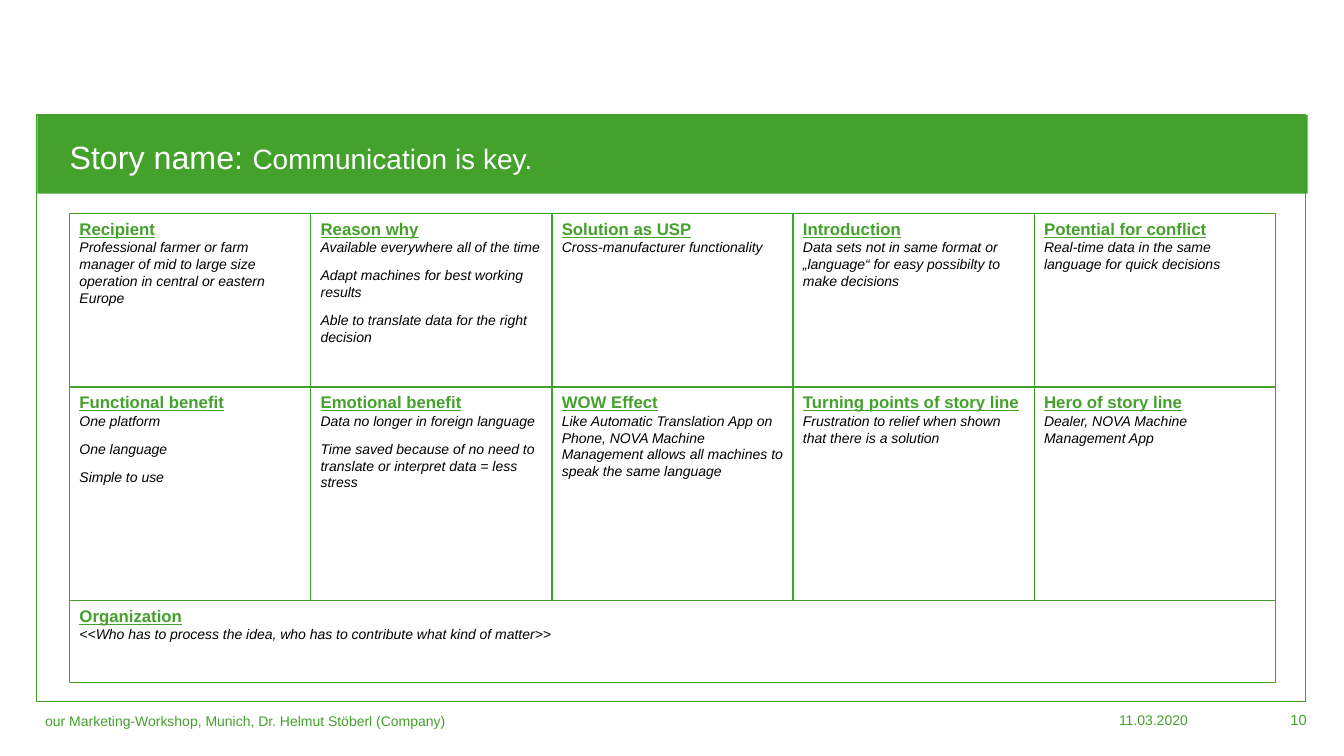
import pptx
import pptx.util
import pptx.dml.color
import pptx.enum.shapes
import pptx.enum.text

Pt, Inch = pptx.util.Pt, pptx.util.Inches
Align = pptx.enum.text.PP_ALIGN
Anchor = pptx.enum.text.MSO_ANCHOR
GREEN, WHITE, BLACK = "44A12C", "FFFFFF", "000000"

# Text formats
HEAD = dict(size=Pt(12), bold=True, underline=True, color=GREEN)
BODY = dict(size=Pt(10), italic=True, color=BLACK)
FOOT = dict(size=Pt(10), color=GREEN)
PAGE = dict(size=Pt(10.5), color=GREEN)
NAME = dict(size=Pt(23), color=WHITE)
CLAIM = dict(size=Pt(20), color=WHITE)

# Story grid: column widths are equal, rows run between these heights
LEFT, WIDE, COLS = 0.69, 11.96, 5
ROWS = [2.12, 3.84, 5.96, 6.77]

# Column, row, columns spanned, rows spanned, heading, lines
CELLS = [
    (0, 0, 1, 2, "Recipient", [
        "Professional farmer or farm manager of mid to large size "
        "operation in central or eastern Europe"]),
    (1, 0, 1, 2, "Reason why", [
        "Available everywhere all of the time",
        "Adapt machines for best working results",
        "Able to translate data for the right decision"]),
    (2, 0, 1, 1, "Solution as USP", ["Cross-manufacturer functionality"]),
    (3, 0, 1, 1, "Introduction", [
        "Data sets not in same format or „language“ for easy "
        "possibilty to make decisions"]),
    (4, 0, 1, 1, "Potential for conflict", [
        "Real-time data in the same language for quick decisions"]),
    (0, 1, 1, 1, "Functional benefit", [
        "One platform", "One language", "Simple to use"]),
    (1, 1, 1, 1, "Emotional benefit", [
        "Data no longer in foreign language",
        "Time saved because of no need to translate or interpret "
        "data = less stress"]),
    (2, 1, 1, 1, "WOW Effect", [
        "Like Automatic Translation App on Phone, NOVA Machine "
        "Management allows all machines to speak the same language"]),
    (3, 1, 1, 1, "Turning points of story line", [
        "Frustration to relief when shown that there is a solution"]),
    (4, 1, 1, 1, "Hero of story line", [
        "Dealer, NOVA Machine Management App"]),
    (0, 2, 5, 1, "Organization", [
        "<<Who has to process the idea, who has to contribute what "
        "kind of matter>>"]),
]


def rgb(code):
    return pptx.dml.color.RGBColor.from_string(code)


def write(para, text, style):
    run = para.add_run()
    run.text = text
    run.font.name = "Arial"
    for key, value in style.items():
        if key == "color":
            run.font.color.rgb = rgb(value)
        else:
            setattr(run.font, key, value)


def pad(frame, side, top):
    for edge, gap in dict(left=side, right=side, top=top, bottom=top).items():
        setattr(frame, "margin_" + edge, Inch(gap))


def rect(slide, box, fill=None, line=None):
    kind = pptx.enum.shapes.MSO_SHAPE.RECTANGLE
    shape = slide.shapes.add_shape(kind, *map(Inch, box))
    shape.shadow.inherit = False
    if fill:
        shape.fill.solid()
        shape.fill.fore_color.rgb = rgb(fill)
    else:
        shape.fill.background()
    if line:
        shape.line.color.rgb = rgb(line)
        shape.line.width = Pt(1)
    else:
        shape.line.fill.background()
    return shape


def label(slide, box, text, style, align, anchor, side=0, top=0):
    frame = slide.shapes.add_textbox(*map(Inch, box)).text_frame
    frame.word_wrap = True
    frame.vertical_anchor = anchor
    pad(frame, side, top)
    para = frame.paragraphs[0]
    para.alignment = align
    write(para, text, style)


def header(slide, box):
    """Green bar with the slide title on it."""
    left, top, wide, high = box
    rect(slide, box, fill=GREEN)
    title = slide.shapes.title
    place = dict(left=left + 0.32, top=top + 0.26, width=4.62, height=0.35)
    for key, value in place.items():
        setattr(title, key, Inch(value))
    slide.shapes.element.append(title.element)  # bring in front of the bar
    frame = title.text_frame
    frame.word_wrap = False
    frame.auto_size = pptx.enum.text.MSO_AUTO_SIZE.NONE
    frame.vertical_anchor = Anchor.MIDDLE
    pad(frame, 0, 0)
    para = frame.paragraphs[0]
    para.alignment = Align.LEFT
    para.line_spacing = 0.9
    write(para, "Story name: ", NAME)
    write(para, "Communication is key.", CLAIM)


def cell(slide, box, head, lines):
    """Outlined field with a heading and its lines."""
    frame = rect(slide, box, line=GREEN).text_frame
    frame.word_wrap = True
    frame.vertical_anchor = Anchor.TOP
    pad(frame, 0.1, 0.05)
    para = frame.paragraphs[0]
    para.alignment = Align.LEFT
    write(para, head, HEAD)
    for index, line in enumerate(lines):
        para = frame.add_paragraph()
        para.alignment = Align.LEFT
        para.space_before = Pt(8 if index else 0)
        write(para, line, BODY)


def grid(slide):
    """All story fields, placed by column and row."""
    step = WIDE / COLS
    for col, row, across, down, head, lines in CELLS:
        box = (LEFT + col * step, ROWS[row],
               across * step, ROWS[row + down] - ROWS[row])
        cell(slide, box, head, lines)


def footer(slide):
    """Event, date and page number."""
    label(slide, (0.35, 6.95, 10.01, 0.4),
          "our Marketing-Workshop, Munich, Dr. Helmut Stöberl (Company)",
          FOOT, Align.LEFT, Anchor.MIDDLE, 0.1, 0.05)
    label(slide, (7.94, 7.06, 3.84, 0.17), "11.03.2020",
          FOOT, Align.RIGHT, Anchor.MIDDLE)
    label(slide, (11.92, 7.05, 1.04, 0.18), "10",
          PAGE, Align.RIGHT, Anchor.TOP)


def main():
    deck = pptx.Presentation()
    deck.slide_width, deck.slide_height = Inch(13.33), Inch(7.5)
    slide = deck.slides.add_slide(deck.slide_layouts[5])
    rect(slide, (0.36, 1.14, 12.59, 5.82), WHITE, GREEN)
    header(slide, (0.37, 1.14, 12.6, 0.78))
    grid(slide)
    footer(slide)
    deck.save("out.pptx")


if __name__ == "__main__":
    main()
